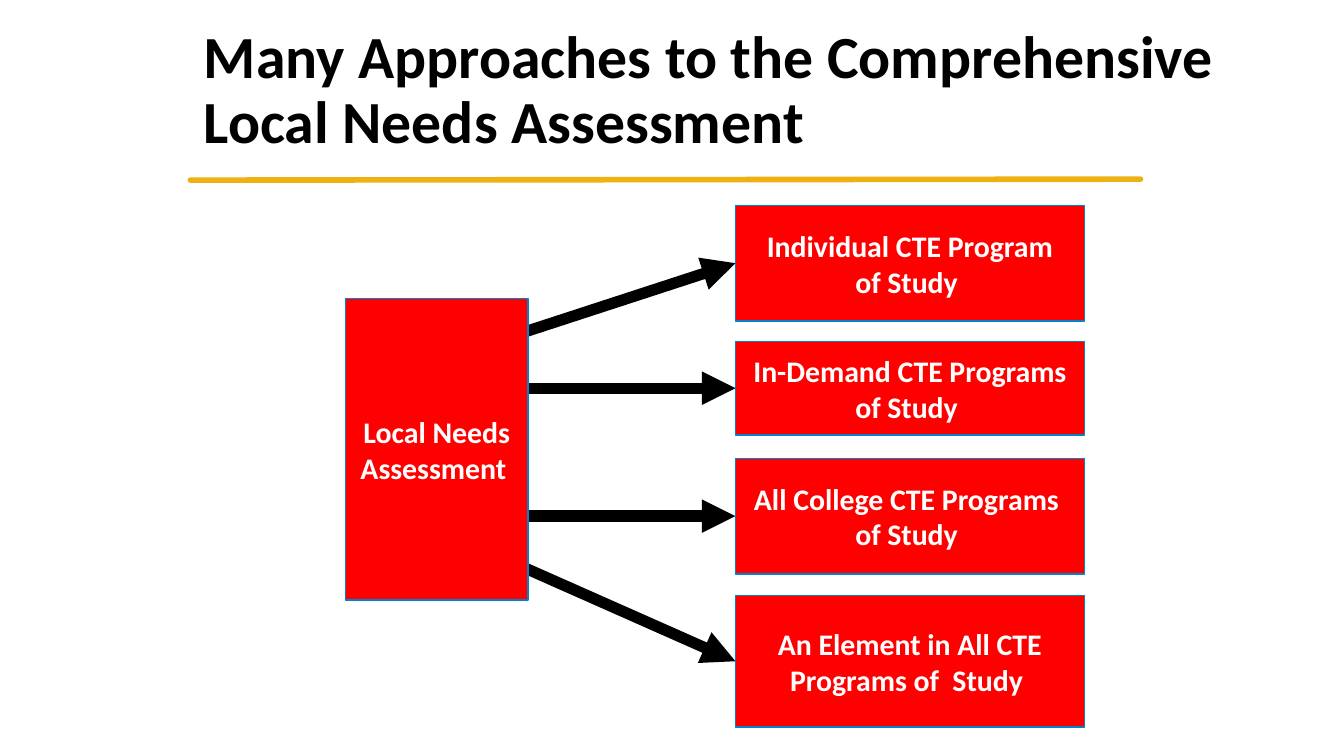
from pptx import Presentation
from pptx import util as u
from pptx.dml import color
from pptx.enum import shapes, text
from pptx.oxml import ns
from lxml import etree

FONT = "Calibri"
TARGETS = [
    ("Individual CTE Program\nof Study ", 110, 62, (276, 179.5)),
    ("In-Demand CTE Programs of Study ", 183, 50, (282, 208)),
    ("All College CTE Programs \nof Study ", 245.5, 62, (282, 276.5)),
    ("An Element in All CTE Programs of  Study ", 319, 70.5, (276, 302)),
]


def rgb(value):
    """Turn a hex string into a colour."""
    return color.RGBColor.from_string(value)


def format_para(para, size, hex_color, align):
    """Set the bold font and alignment of a paragraph."""
    para.alignment = align
    para.font.name = FONT
    para.font.size = u.Pt(size)
    para.font.bold = True
    para.font.color.rgb = rgb(hex_color)


def add_box(page, wording, left, top, width, height):
    """Add a red labelled box."""
    box = page.shapes.add_shape(shapes.MSO_SHAPE.RECTANGLE, u.Pt(left), u.Pt(top), u.Pt(width), u.Pt(height))
    box.shadow.inherit = False
    box.fill.solid()
    box.fill.fore_color.rgb = rgb("FF0000")
    box.line.color.rgb = rgb("0082CC")
    box.line.width = u.Pt(0.75)
    frame = box.text_frame
    frame.word_wrap = True
    frame.vertical_anchor = text.MSO_ANCHOR.MIDDLE
    frame.margin_left = frame.margin_right = frame.margin_top = frame.margin_bottom = u.Pt(2)
    para = frame.paragraphs[0]
    para.text = wording
    format_para(para, 16, "FFFFFF", text.PP_ALIGN.CENTER)
    return box


def add_line(page, start, end, hex_color, width):
    """Add a straight line without a shadow."""
    line = page.shapes.add_connector(shapes.MSO_CONNECTOR.STRAIGHT, *(u.Pt(value) for value in start + end))
    line.line.color.rgb = rgb(hex_color)
    line.line.width = u.Pt(width)
    etree.SubElement(line._element.spPr, ns.qn("a:effectLst"))
    return line


def add_arrow(page, start, box):
    """Add a thick arrow that ends at the left side of a box."""
    arrow = add_line(page, start, start, "000000", 6)
    arrow.end_connect(box, 1)
    etree.SubElement(arrow.line._get_or_add_ln(), ns.qn("a:tailEnd"), type="triangle")


def add_header(page, left, top, width, height):
    """Place the title and the gold rule below it."""
    rule = add_line(page, (left, top + 86.5), (left + 509, top + 86), "EEB111", 3)
    rule.line._get_or_add_ln().set("cap", "rnd")
    title = page.shapes.title
    title.left, title.top, title.width, title.height = (u.Pt(value) for value in (left, top, width, height))
    frame = title.text_frame
    frame.word_wrap = True
    frame.auto_size = text.MSO_AUTO_SIZE.NONE
    frame.vertical_anchor = text.MSO_ANCHOR.MIDDLE
    para = frame.paragraphs[0]
    para.text = "Many Approaches to the Comprehensive Local Needs Assessment"
    para.line_spacing = 0.9
    format_para(para, 32, "000000", text.PP_ALIGN.LEFT)


def add_diagram(page, left, width):
    """Place the assessment, its four approaches and the arrows between them."""
    target_width = 187
    target_left = left + width - target_width
    boxes = [add_box(page, wording, target_left, top, target_width, height) for wording, top, height, _ in TARGETS]
    for box, (_, _, _, start) in zip(boxes, TARGETS):
        add_arrow(page, start, box)
    add_box(page, "Local Needs Assessment ", left, 160, 98, 161.5)


def main():
    """Build and save the deck."""
    deck = Presentation()
    deck.slide_width, deck.slide_height = u.Pt(720), u.Pt(405)
    page = deck.slides.add_slide(deck.slide_layouts[5])
    page.background.fill.solid()
    page.background.fill.fore_color.rgb = rgb("FFFFFF")
    add_header(page, 102, 10, 580, 78.5)
    add_diagram(page, 185, 396)
    deck.save("out.pptx")


if __name__ == "__main__":
    main()
